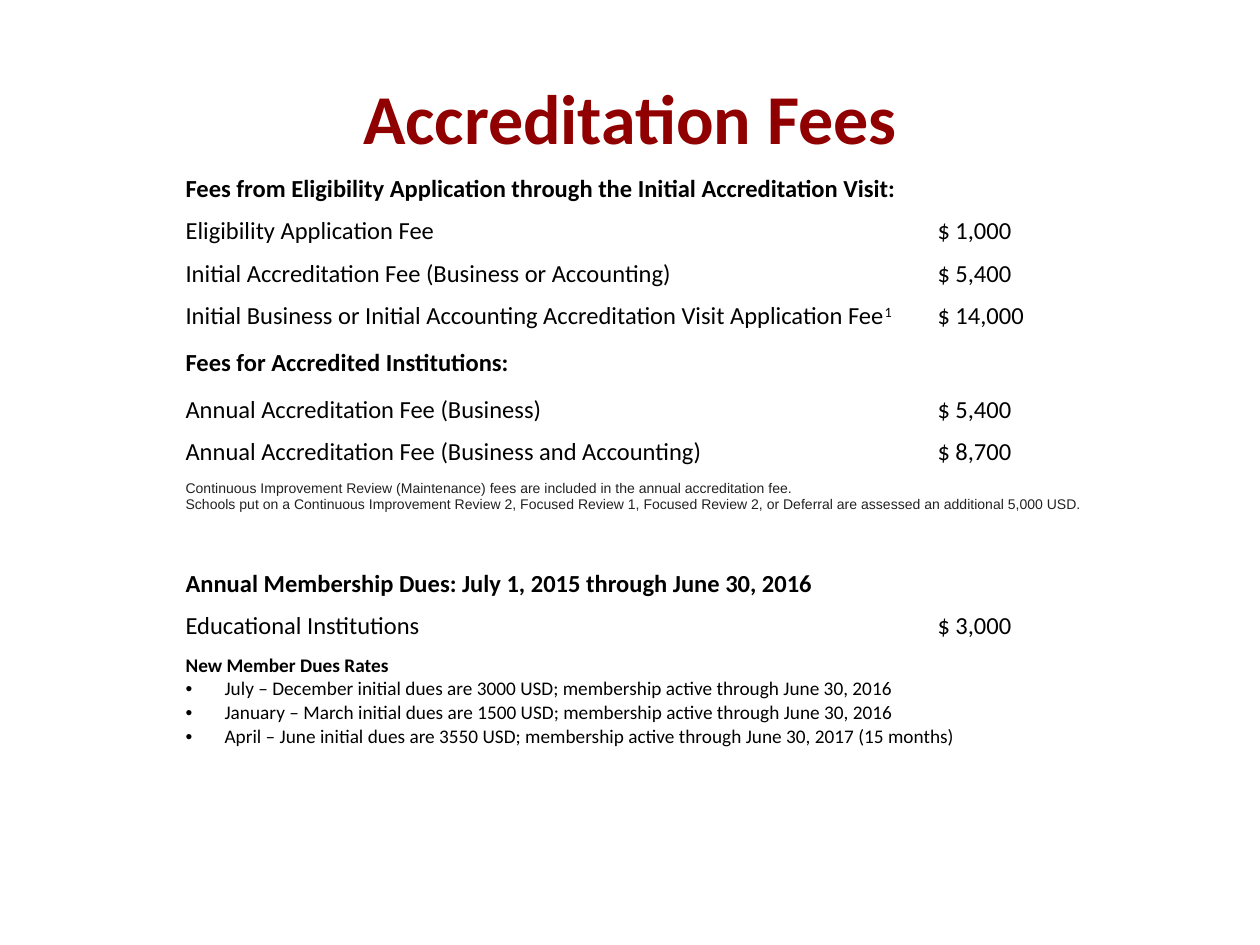
from lxml import etree
from pptx import Presentation
from pptx import util as u
from pptx.dml.color import RGBColor
from pptx.enum import text
from pptx.oxml.ns import qn

PX = u.Inches(1) / 126
MAROON = RGBColor(0x90, 0x00, 0x00)
BLACK = RGBColor(0x00, 0x00, 0x00)
CHARCOAL = RGBColor(0x22, 0x22, 0x22)
WHITE = RGBColor(0xFF, 0xFF, 0xFF)


def px(n):
    return u.Emu(round(n * PX))


def style(run, size, color, bold=False, font="Calibri"):
    run.font.name = font
    run.font.size = u.Pt(size)
    run.font.bold = bold
    run.font.color.rgb = color


prs = Presentation()
prs.slide_width, prs.slide_height = px(1260), px(945)
slide = prs.slides.add_slide(prs.slide_layouts[6])

# Title
title = slide.shapes.add_textbox(px(63), px(38), px(1134), px(158)).text_frame
title.word_wrap = True
title.vertical_anchor = text.MSO_ANCHOR.MIDDLE
title.text = "Accreditation Fees"
title.paragraphs[0].alignment = text.PP_ALIGN.CENTER
style(title.paragraphs[0].runs[0], 40, MAROON, bold=True)

# Fee rows: kind, row height, label, amount
ROWS = [
    ("heading", 42, "Fees from Eligibility Application through the Initial Accreditation Visit:", ""),
    ("fee", 42, "Eligibility Application Fee", "$ 1,000"),
    ("fee", 43, "Initial Accreditation Fee (Business or Accounting)", "$ 5,400"),
    ("fee", 42, "Initial Business or Initial Accounting Accreditation Visit Application Fee", "$ 14,000"),
    ("subheading", 51, "Fees for Accredited Institutions:", ""),
    ("fee", 43, "Annual Accreditation Fee (Business)", "$ 5,400"),
    ("fee", 42, "Annual Accreditation Fee (Business and Accounting)", "$ 8,700"),
    ("note", 44, "Continuous Improvement Review (Maintenance) fees are included in the annual accreditation fee.\n"
     "Schools put on a Continuous Improvement Review 2, Focused Review 1, Focused Review 2, "
     "or Deferral are assessed an additional 5,000 USD.", ""),
    ("gap", 43, "", ""),
    ("heading", 43, "Annual Membership Dues: July 1, 2015 through June 30, 2016", ""),
    ("fee", 42, "Educational Institutions", "$ 3,000"),
    ("rates", 106, "New Member Dues Rates\n"
     "July – December initial dues are 3000 USD; membership active through June 30, 2016\n"
     "January – March initial dues are 1500 USD; membership active through June 30, 2016\n"
     "April – June initial dues are 3550 USD; membership active through June 30, 2017 (15 months)", ""),
]
COLUMNS = [485, 267, 217]
FOOTNOTE_ROW = 3
FULL_WIDTH = ("heading", "note", "rates")

# Table
table = slide.shapes.add_table(len(ROWS), len(COLUMNS), px(173), px(168), px(sum(COLUMNS)),
                               px(sum(row[1] for row in ROWS))).table
table.first_row = table.horz_banding = False
for column, width in zip(table.columns, COLUMNS):
    column.width = px(width)

for r, (kind, height, label, amount) in enumerate(ROWS):
    table.rows[r].height = px(height)
    for c, content in enumerate((label, "", amount)):
        cell = table.cell(r, c)
        cell.fill.solid()
        cell.fill.fore_color.rgb = WHITE
        cell.vertical_anchor = text.MSO_ANCHOR.MIDDLE
        if not content:
            cell.margin_top = cell.margin_bottom = 0
            continue
        cell.text_frame.text = content
        for i, paragraph in enumerate(cell.text_frame.paragraphs):
            run = paragraph.runs[0]
            if kind == "note":
                style(run, 8, CHARCOAL, font="Arial")
            elif kind == "rates":
                style(run, 11, BLACK, bold=i == 0)
                if i > 0:
                    props = paragraph._p.get_or_add_pPr()
                    props.set("marL", str(px(39)))
                    props.set("indent", str(-px(39)))
                    etree.SubElement(props, qn("a:buFont"), typeface="Arial")
                    etree.SubElement(props, qn("a:buChar"), char="•")
            else:
                style(run, 14, BLACK, bold="heading" in kind)

    # Headings and notes span the table, fee labels the first two columns
    if kind == "gap":
        table.cell(r, 1).merge(table.cell(r, 2))
    else:
        table.cell(r, 0).merge(table.cell(r, 2 if kind in FULL_WIDTH else 1))

# Footnote mark
mark = table.cell(FOOTNOTE_ROW, 0).text_frame.paragraphs[0].add_run()
mark.text = "1"
style(mark, 14, BLACK)
mark._r.get_or_add_rPr().set("baseline", "30000")

prs.save("out.pptx")
